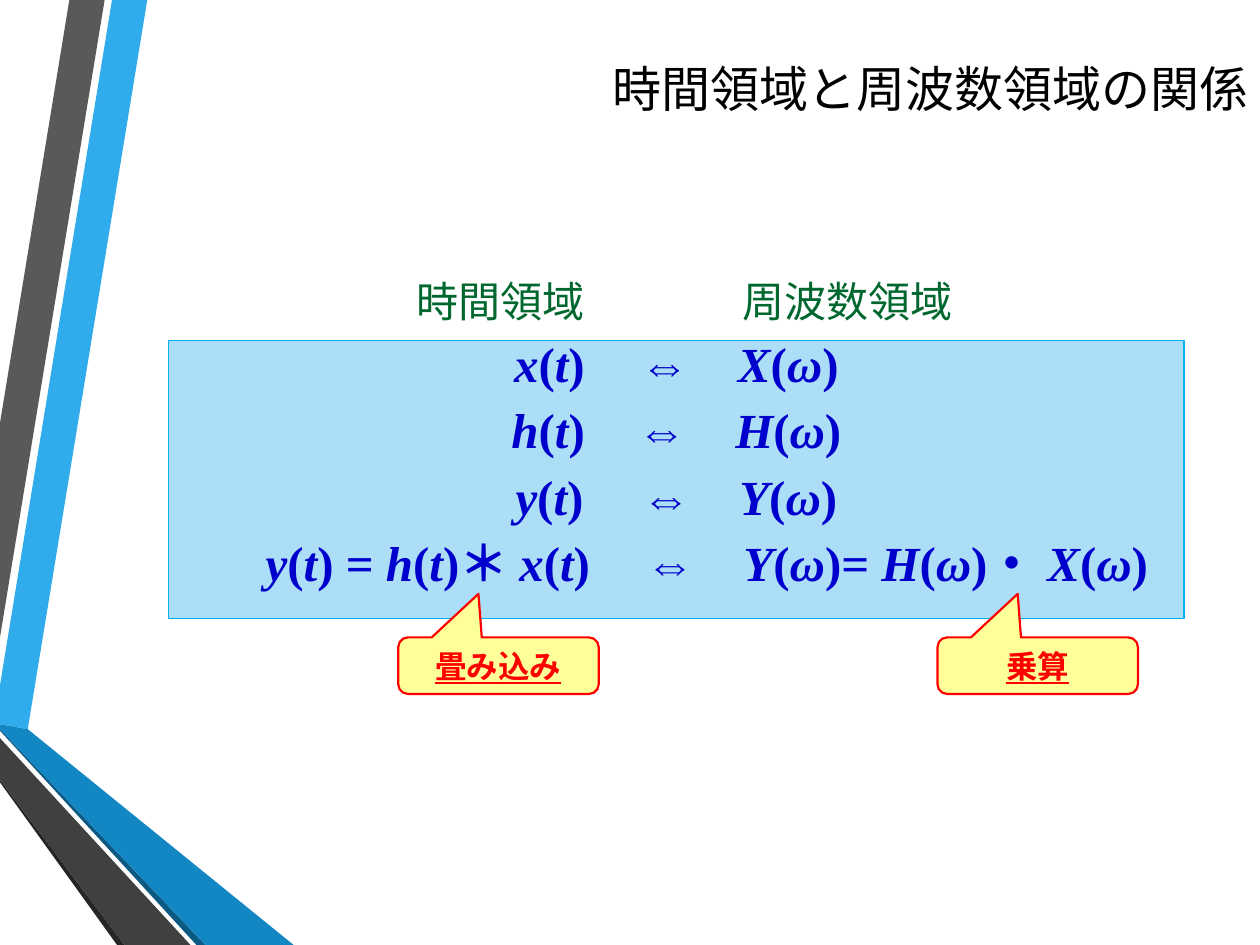
from itertools import groupby

from pptx import Presentation, util as u
from pptx.dml.color import RGBColor
from pptx.enum import shapes, text
from pptx.oxml.ns import qn

ALIGN = text.PP_ALIGN


def color(hex_string):
    return RGBColor.from_string(hex_string)


class SlideBuilder:
    heading = {"name": "Calibri", "size": u.Pt(28)}
    subheading = {"name": "Calibri", "size": u.Pt(24)}
    note = {"name": "Calibri", "size": u.Pt(18), "bold": True, "underline": True}
    formula = {"name": "Times New Roman", "size": u.Pt(28), "bold": True}

    def __init__(self, slide):
        self.slide = slide

    def format_font(self, font, style, hex_string):
        for attribute, value in style.items():
            setattr(font, attribute, value)
        font.color.rgb = color(hex_string)

    def paint(self, shape, fill, line=None, width=0.75):
        shape.shadow.inherit = False
        shape.fill.solid()
        shape.fill.fore_color.rgb = color(fill)
        if line:
            shape.line.color.rgb = color(line)
            shape.line.width = u.Pt(width)
        else:
            shape.line.fill.background()

    def set_wording(self, shape, wording, style, hex_string, align):
        frame = shape.text_frame
        frame.word_wrap = True
        frame.vertical_anchor = text.MSO_ANCHOR.MIDDLE
        paragraph = frame.paragraphs[0]
        paragraph.alignment = align
        run = paragraph.add_run()
        run.text = wording
        self.format_font(run.font, style, hex_string)

    def title(self, wording, *box):
        title = self.slide.shapes.title
        title.left, title.top, title.width, title.height = map(u.Cm, box)
        self.set_wording(title, wording, self.heading, "000000", ALIGN.RIGHT)

    def ribbon(self, fill, points):
        start, *rest = [(u.Cm(x), u.Cm(y)) for x, y in points]
        outline = self.slide.shapes.build_freeform(*start)
        outline.add_line_segments(rest, close=True)
        self.paint(outline.convert_to_shape(), fill)

    def column_head(self, wording, align, *box):
        head = self.slide.shapes.add_textbox(*map(u.Cm, box))
        self.set_wording(head, wording, self.subheading, "00682F", align)

    def callout(self, wording, *box):
        kind = shapes.MSO_SHAPE.ROUNDED_RECTANGULAR_CALLOUT
        callout = self.slide.shapes.add_shape(kind, *map(u.Cm, box))
        for index, value in enumerate((-0.1, -1.27, 0.17)):
            callout.adjustments[index] = value
        self.paint(callout, "FFFF99", "FF0000", 1.25)
        self.set_wording(callout, wording, self.note, "FF0000", ALIGN.CENTER)

    def formula_panel(self, rows, *box):
        """Set each row centred, with its letters in italics."""
        panel = self.slide.shapes.add_shape(shapes.MSO_SHAPE.RECTANGLE, *map(u.Cm, box))
        self.paint(panel, "ACDEF7", "00B0F0")
        frame = panel.text_frame
        frame.word_wrap = True
        frame.vertical_anchor = text.MSO_ANCHOR.TOP
        for index, row in enumerate(rows):
            paragraph = frame.add_paragraph() if index else frame.paragraphs[0]
            layout = {"alignment": ALIGN.CENTER, "line_spacing": u.Pt(26),
                      "space_before": u.Pt(6 if index else 0), "space_after": u.Pt(6)}
            for attribute, value in layout.items():
                setattr(paragraph, attribute, value)
            for italic, letters in groupby(row, str.isalpha):
                run = paragraph.add_run()
                run.text = "".join(letters)
                self.format_font(run.font, {**self.formula, "italic": italic}, "0000CC")
        self.indent_with_tab(paragraph, u.Cm(1.23), u.Cm(8.97))

    def indent_with_tab(self, paragraph, indent, position):
        properties = paragraph._p.get_or_add_pPr()
        properties.set("marL", "0")
        properties.set("indent", str(indent))
        tabs = properties.makeelement(qn("a:tabLst"), {})
        tab = tabs.makeelement(qn("a:tab"), {"pos": str(position), "algn": "l"})
        tabs.append(tab)
        properties.append(tabs)


RIBBONS = [
    ("30ACEC", [(0, 13.82), (0, 14.6), (0.56, 14.7), (2.97, 0), (2.26, 0)]),
    ("595959", [(2.11, 0), (1.4, 0), (0, 8.53), (0, 12.85)]),
    ("262626", [(0, 15.72), (0, 15.77), (2.36, 19.05), (2.51, 19.05)]),
    ("0C5A82", [(0, 14.7), (0, 14.73), (3.96, 19.05), (4.14, 19.05)]),
    ("1287C3", [(0, 14.7), (4.14, 19.05), (5.92, 19.05), (0.56, 14.7), (0, 14.6)]),
    ("404040", [(0, 15.72), (2.51, 19.05), (3.84, 19.05), (0, 14.88)]),
]
FORMULAS = [f"{name}(t)\t⇔　{name.upper()}(ω)" for name in "xhy"]
FORMULAS.append("y(t) = h(t)＊ x(t)\t⇔　Y(ω)= H(ω)・ X(ω)")


def main():
    deck = Presentation()
    deck.slide_width, deck.slide_height = u.Cm(25.4), u.Cm(19.05)
    builder = SlideBuilder(deck.slides.add_slide(deck.slide_layouts[5]))
    for fill, points in RIBBONS:
        builder.ribbon(fill, points)
    builder.title("時間領域と周波数領域の関係", 4.01, 1.04, 21.41, 1.47)
    builder.formula_panel(FORMULAS, 3.4, 6.86, 20.47, 5.61)
    for wording, left in (("畳み込み", 8.03), ("乗算", 18.9)):
        builder.callout(wording, left, 12.85, 4.04, 1.14)
    builder.column_head("周波数領域", ALIGN.LEFT, 14.71, 5.33, 6.76, 1.47)
    builder.column_head("時間領域", ALIGN.RIGHT, 6.25, 5.33, 5.79, 1.47)
    deck.save("out.pptx")


if __name__ == "__main__":
    main()
